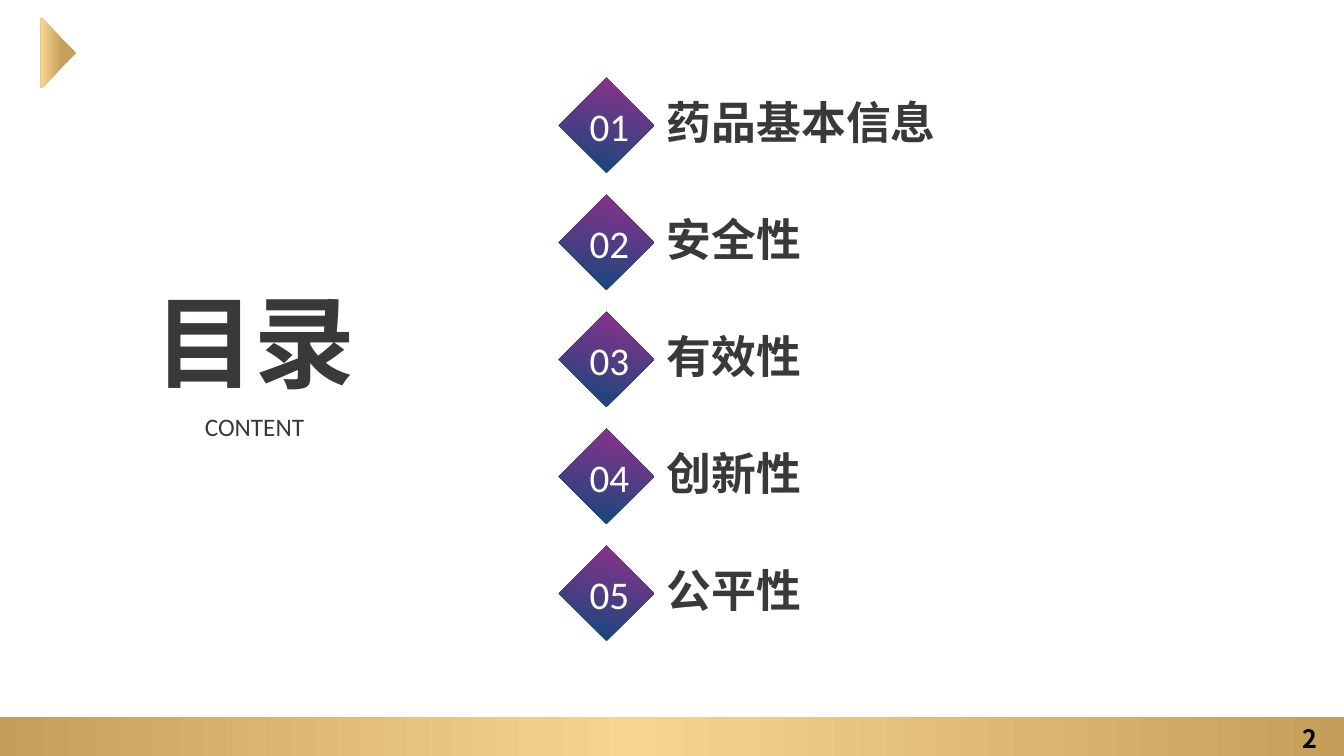
from lxml import etree
from pptx import Presentation
from pptx.dml.color import RGBColor
from pptx.enum.shapes import MSO_SHAPE as SHAPE
from pptx.enum.text import MSO_AUTO_SIZE as FIT, PP_ALIGN as ALIGN
from pptx.oxml.ns import qn
from pptx.util import Emu, Pt

EMU_PER_PX = 914400 / 100.8
DARK, WHITE, BLACK = "3B3838", "FFFFFF", "000000"
GOLD, PALE_GOLD = "C59F59", "F7D591"
DIAMOND_STOPS = [(2, "0B4A7A"), (46, "4E3D83"), (100, "91308C")]
LATIN, CJK = "Calibri", "Noto Sans CJK SC"
TOPICS = ["药品基本信息", "安全性", "有效性", "创新性", "公平性"]
FIRST_TOP, ROW_STEP = 78, 117


def px(n):
    return Emu(round(n * EMU_PER_PX))


def rgb(color):
    return RGBColor.from_string(color)


class Deck:
    """Holds the style and the current slide; boxes are (left, top, width, height) in px."""

    def __init__(self, width, height):
        self.prs = Presentation()
        self.prs.slide_width, self.prs.slide_height = px(width), px(height)
        self.s = self.prs.slides.add_slide(self.prs.slide_layouts[6])

    def group(self):
        return self.s.shapes.add_group_shape().shapes

    def gradient_shape(self, shapes, kind, box, stops, angle):
        """Add a borderless shape; stops are (percent, colour), angle is clockwise degrees."""
        sp = shapes.add_shape(kind, *map(px, box))
        sp.shadow.inherit = False
        sp.line.fill.background()
        sp.fill.gradient()
        grad = sp._element.spPr.find(qn("a:gradFill"))
        stop_list = grad.find(qn("a:gsLst"))
        for old in list(stop_list):
            stop_list.remove(old)
        for percent, color in stops:
            gs = etree.SubElement(stop_list, qn("a:gs"), pos=str(percent * 1000))
            etree.SubElement(gs, qn("a:srgbClr"), val=color)
        grad.find(qn("a:lin")).set("ang", str(angle * 60000))
        return sp

    def text(self, shapes, box, text, size, color=DARK, bold=False,
             align=ALIGN.LEFT, wrap=True, font=LATIN):
        tf = shapes.add_textbox(*map(px, box)).text_frame
        tf.word_wrap, tf.auto_size = wrap, FIT.SHAPE_TO_FIT_TEXT
        p = tf.paragraphs[0]
        p.alignment = align
        r = p.add_run()
        r.text = text
        for name, value in {"name": font, "size": Pt(size), "bold": bold}.items():
            setattr(r.font, name, value)
        r.font.color.rgb = rgb(color)
        etree.SubElement(r._r.get_or_add_rPr(), qn("a:ea"), typeface=CJK)

    def topic(self, number, label, top):
        g = self.group()
        self.gradient_shape(g, SHAPE.DIAMOND, (559, top, 95, 95), DIAMOND_STOPS, 283)
        self.text(g, (562, top + 19, 95, 57), f"{number:02}", 28, WHITE, align=ALIGN.CENTER)
        self.text(g, (657, top + 12, 462, 65), label, 32, bold=True)


def main():
    deck = Deck(1344, 756)
    shapes = deck.s.shapes

    corner = deck.gradient_shape(shapes, SHAPE.RIGHT_TRIANGLE, (16, 28, 50, 50),
                                 [(20, GOLD), (50, PALE_GOLD), (100, GOLD)], 315)
    corner.rotation = 315
    corner._element.spPr.find(qn("a:xfrm")).set("flipH", "1")
    deck.gradient_shape(shapes, SHAPE.RECTANGLE, (0, 717, 1344, 41),
                        [(0, GOLD), (53, PALE_GOLD), (100, GOLD)], 180)

    heading = deck.group()
    deck.text(heading, (98, 406, 313, 40), "CONTENT", 18, align=ALIGN.CENTER)
    deck.text(heading, (143, 275, 224, 132), "目录", 72, bold=True,
              align=ALIGN.CENTER, wrap=False)

    for i, label in enumerate(TOPICS):
        deck.topic(i + 1, label, FIRST_TOP + i * ROW_STEP)

    deck.text(shapes, (1293, 718, 36, 40), "2", 18, BLACK, bold=True, wrap=False, font=CJK)
    deck.prs.save("out.pptx")


if __name__ == "__main__":
    main()
